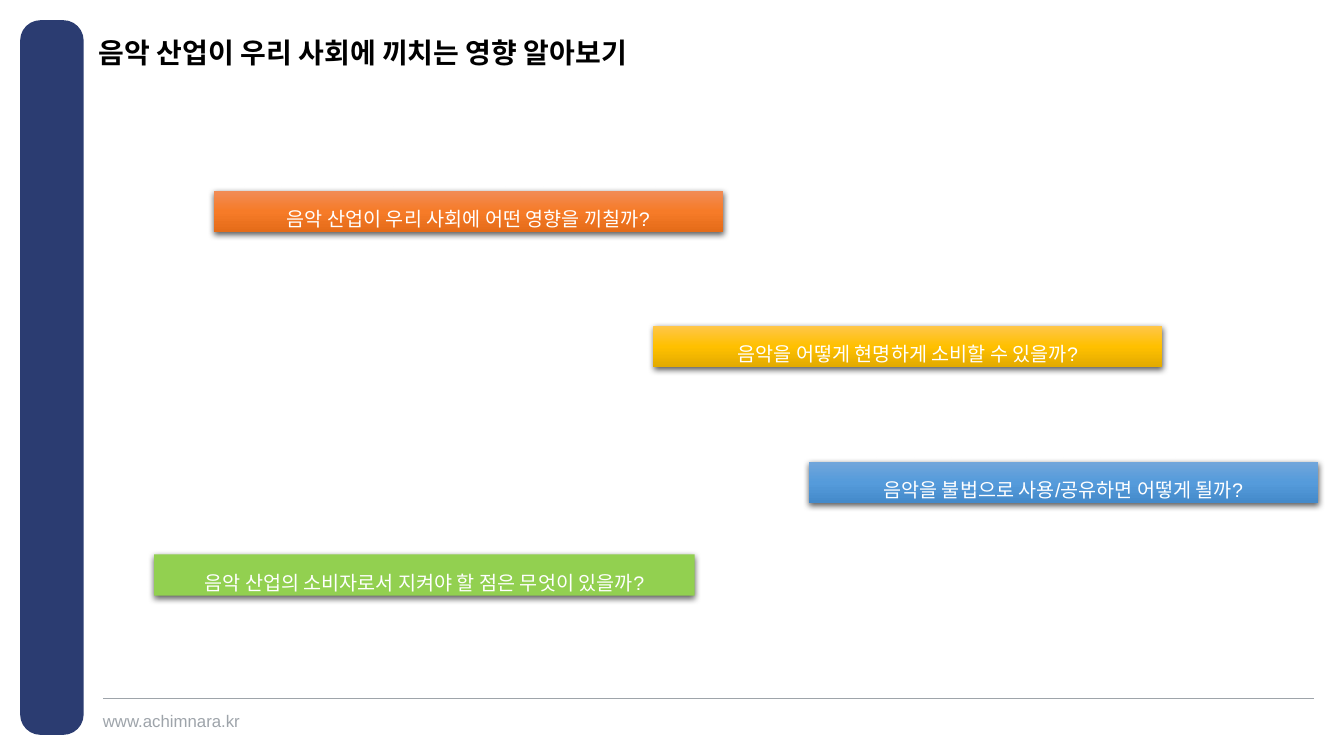
import pptx
import pptx.dml.color
import pptx.enum.shapes
import pptx.enum.text
import pptx.oxml
import pptx.oxml.ns
import pptx.util
from pptx.util import Inches

COLORS = {
    "navy": "2B3C71",
    "gray": "9EA4AA",
    "black": "000000",
    "white": "FFFFFF",
}
FILLS = {
    "green": ["92D050"],
    "blue": ["71A6DB", "559BDB", "448ACA"],
    "yellow": ["FFC64B", "FFC000", "E3AB00"],
    "orange": ["F18C57", "F67B28", "E56C19"],
}
QUESTIONS = [
    ("음악 산업의 소비자로서 지켜야 할 점은 무엇이 있을까?", 1.53, 5.5, 5.36, "green"),
    ("음악을 불법으로 사용/공유하면 어떻게 될까?", 8.02, 4.58, 5.05, "blue"),
    ("음악을 어떻게 현명하게 소비할 수 있을까?", 6.48, 3.23, 5.05, "yellow"),
    ("음악 산업이 우리 사회에 어떤 영향을 끼칠까?", 2.12, 1.89, 5.05, "orange"),
]


def rgb(value):
    return pptx.dml.color.RGBColor.from_string(value)


def parse_drawing(body):
    return pptx.oxml.parse_xml(body.replace(">", f" {pptx.oxml.ns.nsdecls('a')}>", 1))


def format_text(text_frame, text, size, color, alignment, bold=False):
    text_frame.text = text
    text_frame.word_wrap = True
    text_frame.vertical_anchor = pptx.enum.text.MSO_ANCHOR.TOP
    paragraph = text_frame.paragraphs[0]
    paragraph.alignment = alignment
    for run in paragraph.runs:
        run.font.name = "Arial"
        run.font.size = pptx.util.Pt(size)
        run.font.bold = bold
        run.font.color.rgb = rgb(color)
    return paragraph


def clear_margins(text_frame):
    text_frame.margin_left = text_frame.margin_right = 0
    text_frame.margin_top = text_frame.margin_bottom = 0


def add_title(slide, text):
    title = slide.shapes.title
    title.left, title.top = Inches(0.98), Inches(0.39)
    title.width, title.height = Inches(7.87), Inches(0.28)
    clear_margins(title.text_frame)
    title.text_frame.auto_size = pptx.enum.text.MSO_AUTO_SIZE.NONE
    paragraph = format_text(title.text_frame, text, 20, COLORS["black"],
                            pptx.enum.text.PP_ALIGN.LEFT, True)
    paragraph.line_spacing = 0.9
    paragraph.space_before = pptx.util.Pt(0)


def add_side_bar(slide):
    bar = slide.shapes.add_shape(
        pptx.enum.shapes.MSO_SHAPE.ROUNDED_RECTANGLE,
        Inches(0.2), Inches(0.2), Inches(0.63), Inches(7.09))
    bar.adjustments[0] = 0.32
    bar.shadow.inherit = False
    bar.fill.solid()
    bar.fill.fore_color.rgb = rgb(COLORS["navy"])
    bar.line.fill.background()


def add_footer(slide, text):
    rule = slide.shapes.add_connector(
        pptx.enum.shapes.MSO_CONNECTOR.STRAIGHT,
        Inches(13.03), Inches(6.93), Inches(1.02), Inches(6.93))
    rule.line.color.rgb = rgb(COLORS["gray"])
    rule.line.width = pptx.util.Pt(0.5)
    rule._element.spPr.append(parse_drawing("<a:effectLst></a:effectLst>"))
    box = slide.shapes.add_textbox(Inches(1.02), Inches(7.05), Inches(1.5), Inches(0.2))
    clear_margins(box.text_frame)
    format_text(box.text_frame, text, 12, COLORS["gray"], pptx.enum.text.PP_ALIGN.LEFT)


def fill_gradient(shape, colors):
    stops = "".join(
        f'<a:gs pos="{index * 50000}"><a:srgbClr val="{color}"/></a:gs>'
        for index, color in enumerate(colors))
    gradient = parse_drawing(
        f'<a:gradFill><a:gsLst>{stops}</a:gsLst><a:lin ang="5400000" scaled="0"/></a:gradFill>')
    shape._element.spPr.find(pptx.oxml.ns.qn("a:prstGeom")).addnext(gradient)


def add_shadow(shape):
    shape.shadow.inherit = False
    effects = shape._element.spPr.find(pptx.oxml.ns.qn("a:effectLst"))
    effects.append(parse_drawing(
        '<a:outerShdw blurRad="57150" dist="19050" dir="5400000" algn="ctr" rotWithShape="0">'
        f'<a:srgbClr val="{COLORS["black"]}"><a:alpha val="63000"/></a:srgbClr></a:outerShdw>'))


def add_question(slide, text, left, top, width, fill):
    box = slide.shapes.add_shape(
        pptx.enum.shapes.MSO_SHAPE.RECTANGLE,
        Inches(left), Inches(top), Inches(width), Inches(0.41))
    colors = FILLS[fill]
    if len(colors) == 1:
        box.fill.solid()
        box.fill.fore_color.rgb = rgb(colors[0])
    else:
        fill_gradient(box, colors)
    box.line.fill.background()
    add_shadow(box)
    paragraph = format_text(box.text_frame, text, 14, COLORS["white"],
                            pptx.enum.text.PP_ALIGN.CENTER)
    paragraph.line_spacing = 1.5
    box.text_frame.auto_size = pptx.enum.text.MSO_AUTO_SIZE.SHAPE_TO_FIT_TEXT


def main():
    presentation = pptx.Presentation()
    presentation.slide_width = Inches(13.33)
    presentation.slide_height = Inches(7.5)
    slide = presentation.slides.add_slide(presentation.slide_layouts[5])
    add_side_bar(slide)
    add_footer(slide, "www.achimnara.kr")
    add_title(slide, "음악 산업이 우리 사회에 끼치는 영향 알아보기")
    for question in QUESTIONS:
        add_question(slide, *question)
    presentation.save("out.pptx")


if __name__ == "__main__":
    main()
